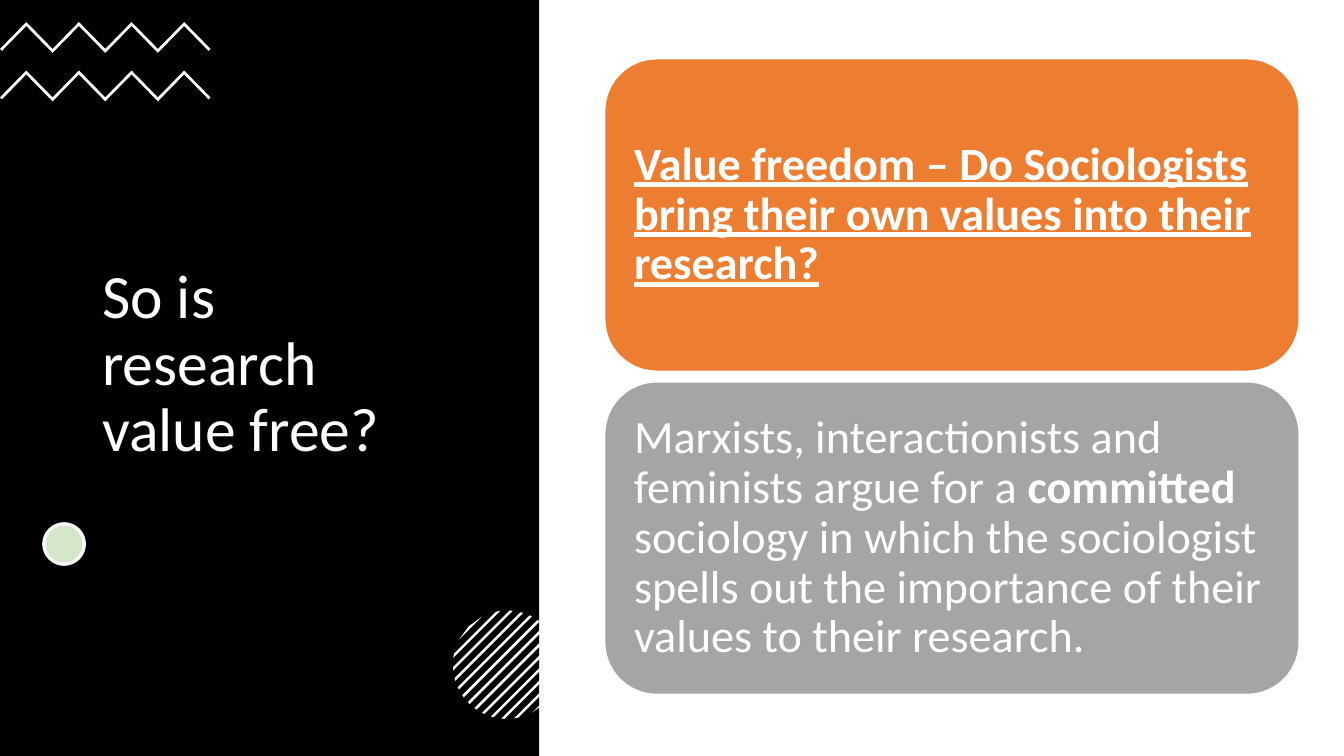
from math import sqrt

from lxml.etree import SubElement
from pptx import Presentation
from pptx.dml.color import RGBColor
from pptx.enum.shapes import MSO_SHAPE
from pptx.enum.text import MSO_ANCHOR
from pptx.oxml.ns import qn
from pptx.util import Pt

COLORS = {
    "black": "000000",
    "white": "FFFFFF",
    "green": "70AD47",
    "orange": "ED7D31",
    "gray": "A5A5A5",
}


def rgb(name):
    return RGBColor.from_string(COLORS[name])


def write(para, text, size=33, color="white", bold=False, under=False):
    run = para.add_run()
    run.text = text
    font = run.font
    font.name = "Calibri"
    font.size = Pt(size)
    font.bold = bold
    font.underline = under
    font.color.rgb = rgb(color)


class Page:
    def __init__(self, slide):
        self.shapes = slide.shapes

    def paint(self, shape, fill, line=0, alpha=None):
        shape.shadow.inherit = False
        shape.fill.solid()
        shape.fill.fore_color.rgb = rgb(fill)
        if alpha is not None:
            tint = shape.fill._xPr.find(qn("a:solidFill"))[0]
            SubElement(tint, qn("a:alpha")).set("val", str(alpha * 1000))
        if line:
            shape.line.color.rgb = rgb("white")
            shape.line.width = Pt(line)
        else:
            shape.line.fill.background()

    def block(self, kind, box, fill, line=0, alpha=None):
        shape = self.shapes.add_shape(kind, *map(Pt, box))
        self.paint(shape, fill, line, alpha)

    def outline(self, points, fill="white"):
        first, *rest = [(Pt(x), Pt(y)) for x, y in points]
        form = self.shapes.build_freeform(*first, scale=1.0)
        form.add_line_segments(rest, close=True)
        self.paint(form.convert_to_shape(), fill)

    def words(self, box, parts, inset=None):
        frame = self.shapes.add_textbox(*map(Pt, box)).text_frame
        frame.word_wrap = True
        frame.vertical_anchor = MSO_ANCHOR.MIDDLE
        if inset is not None:
            frame.margin_left = frame.margin_right = Pt(inset)
            frame.margin_top = frame.margin_bottom = Pt(inset)
        para = frame.paragraphs[0]
        para.line_spacing = 0.9
        for text, form in parts:
            write(para, text, **form)


def zigzag(top, step=18.8, rise=19.2, thick=2.8):
    upper = [(i * step, top + (0 if i % 2 else rise)) for i in range(9)]
    lower = [(x, y + thick) for x, y in upper[-2:0:-1]]
    half = thick / 2
    end = (upper[-1][0] - half, upper[-1][1] + half)
    start = (half, upper[0][1] + half)
    return upper + [end] + lower + [start]


def stripe(offset, mid=(362.2, 474.8), radius=38.7, half=0.9):
    """Band of a disc cut along the rising diagonal."""
    points = []
    for edge, signs in ((offset - half, (1, -1)), (offset + half, (-1, 1))):
        edge = max(-radius, min(radius, edge))
        reach = sqrt(radius ** 2 - edge ** 2)
        for sign in signs:
            points.append((mid[0] + (edge + sign * reach) / sqrt(2),
                           mid[1] + (edge - sign * reach) / sqrt(2)))
    return points


def main():
    deck = Presentation()
    deck.slide_width, deck.slide_height = Pt(960), Pt(540)
    page = Page(deck.slides.add_slide(deck.slide_layouts[6]))

    # Dark panel and title
    page.block(MSO_SHAPE.RECTANGLE, (0, 0, 385.2, 540), "black")
    page.words((66, 94.5, 252, 333),
               [("So is research value free?", {"size": 44})])

    # Zigzag lines
    for top in (15.8, 50.4):
        page.outline(zigzag(top))

    # Pale green dot over a white one
    dot = (31.4, 374.2, 28.8, 28.8)
    page.block(MSO_SHAPE.OVAL, dot, "white", line=2.25)
    page.block(MSO_SHAPE.OVAL, dot, "green", line=2.25, alpha=30)

    # Striped disc
    for index in range(-6, 7):
        page.outline(stripe(index * 6.3))

    # Cards
    cards = [
        ("orange", [
            ("Value freedom – Do Sociologists bring their own values into "
             "their research?", {"bold": True, "under": True}),
        ]),
        ("gray", [
            ("Marxists, interactionists and feminists argue for a ", {}),
            ("committed", {"bold": True}),
            (" sociology in which the sociologist spells out the importance "
             "of their values to their research.", {}),
        ]),
    ]
    for row, (fill, parts) in enumerate(cards):
        top = 42 + row * 230.8
        page.block(MSO_SHAPE.ROUNDED_RECTANGLE, (432, top, 496, 223.2),
                   fill, line=1)
        page.words((442.9, top + 10.9, 474.2, 201.4), parts, inset=10)

    deck.save("out.pptx")


if __name__ == "__main__":
    main()
